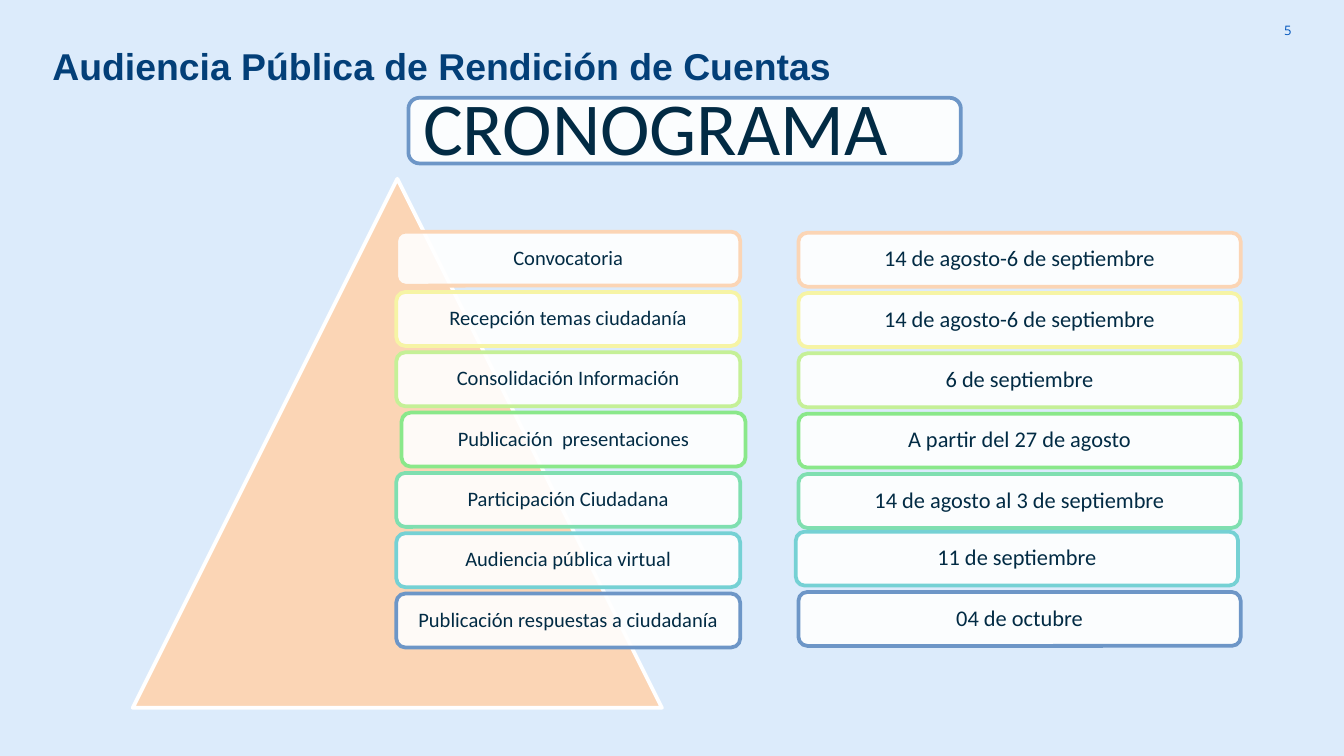
from lxml import etree
from pptx import Presentation
from pptx.dml.color import RGBColor
from pptx.enum.shapes import MSO_SHAPE
from pptx.enum.text import MSO_ANCHOR, PP_ALIGN
from pptx.oxml.ns import qn
from pptx.util import Cm, Pt

BACKGROUND = RGBColor(0xDC, 0xEB, 0xFB)
WHITE = RGBColor(0xFF, 0xFF, 0xFF)
INK = RGBColor(0x02, 0x2B, 0x44)
NAVY = RGBColor(0x03, 0x3F, 0x78)
BLUE = RGBColor(0x00, 0x54, 0xBC)
PEACH = RGBColor(0xFB, 0xD5, 0xB5)
YELLOW = RGBColor(0xF6, 0xF4, 0xA5)
LIME = RGBColor(0xC5, 0xF0, 0x97)
GREEN = RGBColor(0x8A, 0xE8, 0x8A)
MINT = RGBColor(0x7F, 0xDF, 0xB0)
AQUA = RGBColor(0x75, 0xD1, 0xD4)
STEEL = RGBColor(0x6D, 0x96, 0xC7)

ROW_COLORS = [PEACH, YELLOW, LIME, GREEN, MINT, AQUA, STEEL]
ROW_STEP, ROW_HEIGHT = 1.14, 1.02

# Each entry: text, horizontal and vertical nudge in cm
ACTIVITIES = [
    ("Convocatoria", 0, 0),
    ("Recepción temas ciudadanía", 0, 0),
    ("Consolidación Información", 0, 0),
    ("Publicación  presentaciones", 0.1, 0),
    ("Participación Ciudadana", 0, 0),
    ("Audiencia pública virtual", 0, 0),
    ("Publicación respuestas a ciudadanía", 0, 0),
]
DATES = [
    ("14 de agosto-6 de septiembre", 0, 0),
    ("14 de agosto-6 de septiembre", 0, 0),
    ("6 de septiembre", 0, 0),
    ("A partir del 27 de agosto", 0, 0),
    ("14 de agosto al 3 de septiembre", 0, 0),
    ("11 de septiembre", -0.05, -0.05),
    ("04 de octubre", 0, -0.05),
]


def write(shape, text, *, size, font="Calibri", color=INK, bold=False,
          align=PP_ALIGN.CENTER, anchor=MSO_ANCHOR.MIDDLE, inset=0.18,
          spacing=0.9):
    frame = shape.text_frame
    frame.word_wrap = True
    frame.vertical_anchor = anchor
    frame.margin_left = frame.margin_right = Cm(inset)
    frame.margin_top = frame.margin_bottom = Cm(inset)
    paragraph = frame.paragraphs[0]
    paragraph.alignment = align
    paragraph.line_spacing = spacing
    run = paragraph.add_run()
    run.text = text
    run.font.name = font
    run.font.size = Pt(size)
    run.font.bold = bold
    run.font.color.rgb = color


def add_text(slide, box, text, **style):
    write(slide.shapes.add_textbox(*map(Cm, box)), text, **style)


def add_outlined(slide, kind, box, fill, line, opacity=100):
    shape = slide.shapes.add_shape(kind, *map(Cm, box))
    shape.shadow.inherit = False
    shape.fill.solid()
    shape.fill.fore_color.rgb = fill
    shape.line.color.rgb = line
    shape.line.width = Pt(2)
    if opacity < 100:
        tint = shape.fill._xPr.find(".//" + qn("a:srgbClr"))
        etree.SubElement(tint, qn("a:alpha"), val=str(opacity * 1000))
    return shape


def add_card(slide, box, line):
    return add_outlined(slide, MSO_SHAPE.ROUNDED_RECTANGLE, box, WHITE, line,
                        opacity=90)


def add_header(slide, left, top, width):
    add_text(slide, (left + width - 1.52, top, 1.52, 1.09), "5", size=7,
             font="Open Sans", color=BLUE, align=PP_ALIGN.RIGHT, inset=0.25,
             spacing=1)
    add_text(slide, (left, top + 0.53, 18.54, 1.96),
             "Audiencia Pública de Rendición de Cuentas", size=20,
             font="Arial", color=NAVY, bold=True, align=PP_ALIGN.LEFT,
             anchor=MSO_ANCHOR.TOP, inset=0.25, spacing=1)


def add_banner(slide, left, top, width, height):
    add_card(slide, (left, top, width, height), STEEL)
    # The wording sits left of the middle of its frame
    add_text(slide, (left - 0.48, top + 0.08, 10.29, 1.12), "CRONOGRAMA",
             size=40)


def add_column(slide, left, top, width, entries, size):
    for row, ((text, dx, dy), color) in enumerate(zip(entries, ROW_COLORS)):
        box = (left + dx, top + row * ROW_STEP + dy, width, ROW_HEIGHT)
        write(add_card(slide, box, color), text, size=size, inset=0.13)


def main():
    presentation = Presentation()
    presentation.slide_width = Cm(25.4)
    presentation.slide_height = Cm(14.29)
    slide = presentation.slides.add_slide(presentation.slide_layouts[6])
    slide.background.fill.solid()
    slide.background.fill.fore_color.rgb = BACKGROUND

    # Page number, title and banner
    add_header(slide, 0.74, 0.03, 23.92)
    add_banner(slide, 7.72, 1.85, 10.44, 1.24)

    # Pyramid with the activities over it, and their dates beside them
    add_outlined(slide, MSO_SHAPE.ISOSCELES_TRIANGLE,
                 (2.51, 3.38, 10, 10), PEACH, WHITE)
    add_column(slide, 7.49, 4.38, 6.5, ACTIVITIES, size=11)
    add_column(slide, 15.09, 4.4, 8.36, DATES, size=12)

    presentation.save("out.pptx")


if __name__ == "__main__":
    main()
